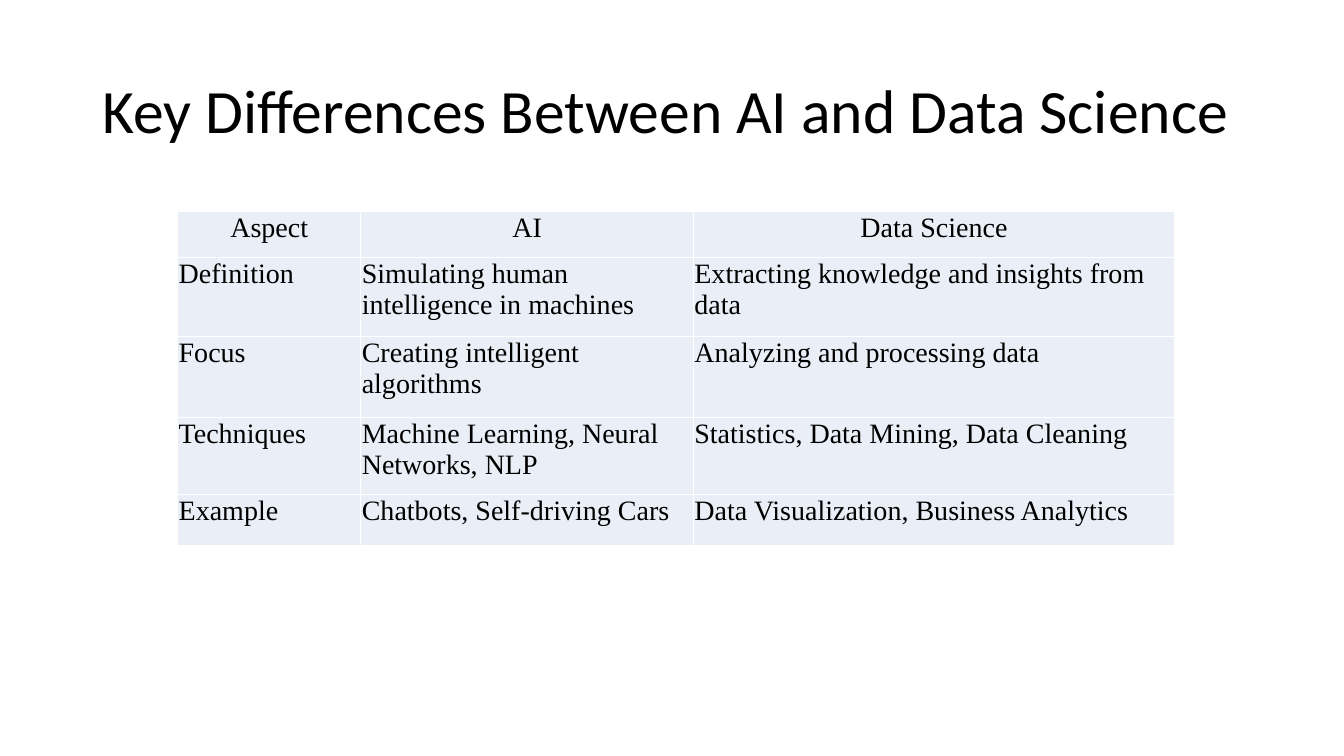
import dataclasses

import lxml.etree
import pptx
import pptx.dml.color
import pptx.enum.text
import pptx.oxml.ns
import pptx.util


@dataclasses.dataclass(frozen=True)
class Theme:
    title_font: str = "Calibri"
    table_font: str = "Times New Roman"
    title_size: int = 44
    table_size: int = 20
    text: str = "000000"
    cell_fill: str = "EAEFF7"
    border: str = "FFFFFF"
    border_width: int = 1


class SlideBuilder:
    """Places elements on a grid of 160 columns by 90 rows."""

    COLUMNS, ROWS = 160, 90

    def __init__(self, presentation, theme):
        self.theme = theme
        self.column = presentation.slide_width / self.COLUMNS
        self.row = presentation.slide_height / self.ROWS
        self.slide = presentation.slides.add_slide(presentation.slide_layouts[5])

    def across(self, columns):
        return pptx.util.Emu(round(columns * self.column))

    def down(self, rows):
        return pptx.util.Emu(round(rows * self.row))

    def style(self, paragraph, font_name, size, alignment):
        paragraph.alignment = alignment
        paragraph.font.name = font_name
        paragraph.font.size = pptx.util.Pt(size)
        paragraph.font.color.rgb = pptx.dml.color.RGBColor.from_string(self.theme.text)

    def title(self, text, left, top, width, height):
        shape = self.slide.shapes.title
        shape.left, shape.top = self.across(left), self.down(top)
        shape.width, shape.height = self.across(width), self.down(height)
        frame = shape.text_frame
        frame.text = text
        frame.word_wrap = True
        frame.auto_size = pptx.enum.text.MSO_AUTO_SIZE.NONE
        frame.vertical_anchor = pptx.enum.text.MSO_ANCHOR.MIDDLE
        paragraph = frame.paragraphs[0]
        paragraph.line_spacing = 0.9
        self.style(paragraph, self.theme.title_font, self.theme.title_size,
                   pptx.enum.text.PP_ALIGN.LEFT)

    def table(self, records, left, top, widths, heights):
        table = self.slide.shapes.add_table(
            len(heights), len(widths), self.across(left), self.down(top),
            self.across(sum(widths)), self.down(sum(heights))).table
        table.horz_banding = False
        for column, width in zip(table.columns, widths):
            column.width = self.across(width)
        for row_index, (row, height, record) in enumerate(zip(table.rows, heights, records)):
            row.height = self.down(height)
            alignment = (pptx.enum.text.PP_ALIGN.LEFT if row_index
                         else pptx.enum.text.PP_ALIGN.CENTER)
            for cell, text in zip(row.cells, record):
                self.cell(cell, text, alignment)

    def cell(self, cell, text, alignment):
        cell.text = text
        cell.margin_left = cell.margin_right = cell.margin_top = pptx.util.Inches(0.01)
        cell.margin_bottom = 0
        cell.fill.solid()
        cell.fill.fore_color.rgb = pptx.dml.color.RGBColor.from_string(self.theme.cell_fill)
        paragraph = cell.text_frame.paragraphs[0]
        self.style(paragraph, self.theme.table_font, self.theme.table_size, alignment)
        paragraph.font.bold = False
        self.borders(cell)

    def borders(self, cell):
        qualified = pptx.oxml.ns.qn
        properties = cell._tc.get_or_add_tcPr()
        for index, side in enumerate(("a:lnL", "a:lnR", "a:lnT", "a:lnB")):
            line = lxml.etree.Element(
                qualified(side), w=str(pptx.util.Pt(self.theme.border_width)))
            fill = lxml.etree.SubElement(line, qualified("a:solidFill"))
            lxml.etree.SubElement(fill, qualified("a:srgbClr"), val=self.theme.border)
            properties.insert(index, line)


def main():
    presentation = pptx.Presentation()
    presentation.slide_width = pptx.util.Inches(13.33)
    presentation.slide_height = pptx.util.Inches(7.5)
    builder = SlideBuilder(presentation, Theme())
    builder.title("Key Differences Between AI and Data Science", 11, 4.8, 138, 17.4)
    builder.table(
        [
            ("Aspect", "AI", "Data Science"),
            ("Definition", "Simulating human intelligence in machines",
             "Extracting knowledge and insights from data"),
            ("Focus", "Creating intelligent algorithms", "Analyzing and processing data"),
            ("Techniques", "Machine Learning, Neural Networks, NLP",
             "Statistics, Data Mining, Data Cleaning"),
            ("Example", "Chatbots, Self-driving Cars",
             "Data Visualization, Business Analytics"),
        ],
        left=21.15, top=25.2,
        widths=(21.8, 39.6, 57.3), heights=(5.5, 9.4, 9.6, 9.2, 6))
    presentation.save("out.pptx")


if __name__ == "__main__":
    main()
